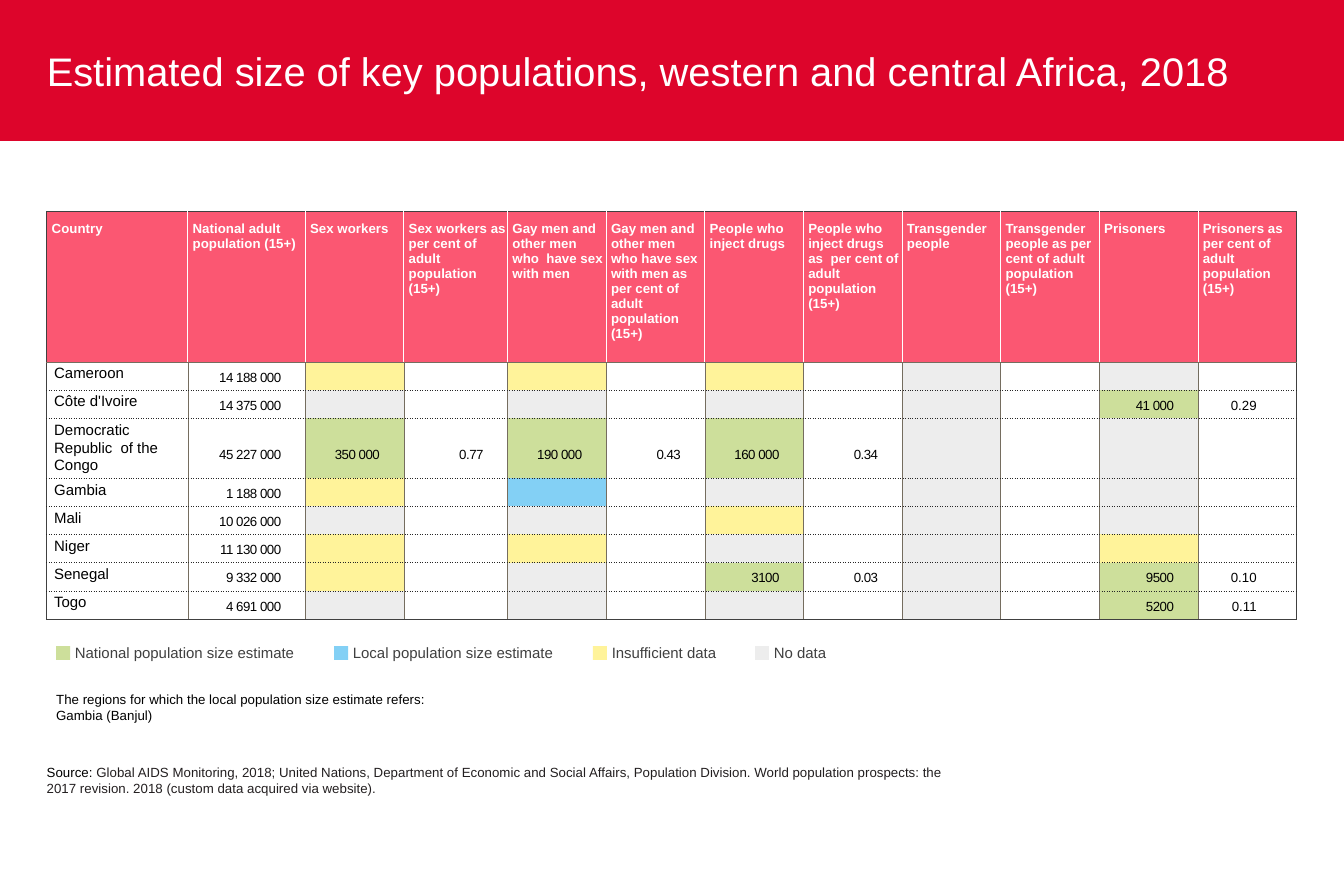
from dataclasses import dataclass

from lxml import etree
from pptx import Presentation, util as u
from pptx.dml.color import RGBColor
from pptx.enum import shapes, text
from pptx.oxml import ns


@dataclass(frozen=True)
class Theme:
    font: str = "Arial"
    band: str = "DD052B"
    header: str = "FB5772"
    white: str = "FFFFFF"
    black: str = "000000"
    source: str = "231F20"
    dark: str = "404040"
    rule: str = "756D5F"
    dots: str = "262626"
    national: str = "CDDF9B"
    local: str = "83D0F5"
    insufficient: str = "FFF39A"
    missing: str = "EDEDED"
    title_size: float = 24
    label_size: float = 9
    small_size: float = 8


@dataclass(frozen=True)
class Estimate:
    color: str
    size: str = ""
    share: str = ""


@dataclass(frozen=True)
class Country:
    name: str
    adults: str
    estimates: tuple[Estimate, ...]
    height: float = 3.14


@dataclass(frozen=True)
class Key:
    label: str
    color: str
    width: float


@dataclass(frozen=True)
class Border:
    color: str
    width: float
    dash: str = "solid"


THEME = Theme()
OUTER = Border(THEME.dark, 0.5)
HEADER_RULE = Border(THEME.white, 0.5)
INNER = Border(THEME.rule, 0.25)
DOTTED = Border(THEME.dots, 0.25, "dot")
LOW = Estimate(THEME.insufficient)
NONE = Estimate(THEME.missing)
LOCAL = Estimate(THEME.local)

SLIDE_WIDTH, SLIDE_HEIGHT = u.Inches(11.25), u.Inches(7.5)
LEFT, INDENTED = 3.48, 4.18
COLUMN_WIDTHS = [10.49, 8.74, 7.34, 7.72] + [7.34] * 8
HEADER_HEIGHT = 16.8
HEADERS = [
    "Country", "National adult population (15+)",
    "Sex workers", "Sex workers as per cent of adult population (15+)",
    "Gay men and other men who  have sex with men",
    "Gay men and other men who have sex with men as per cent of adult population (15+)",
    "People who inject drugs", "People who inject drugs as  per cent of adult population (15+)",
    "Transgender people", "Transgender people as per cent of adult population (15+)",
    "Prisoners", "Prisoners as per cent of adult population (15+)",
]


def counted(size: str, share: str) -> Estimate:
    return Estimate(THEME.national, size, share)


COUNTRIES = [
    Country("Cameroon", "14 188 000", (LOW, LOW, LOW, NONE, NONE)),
    Country("Côte d'Ivoire", "14 375 000", (NONE, NONE, NONE, NONE, counted("41 000", "0.29"))),
    Country("Democratic Republic  of the Congo", "45 227 000",
            (counted("350 000", "0.77"), counted("190 000", "0.43"),
             counted("160 000", "0.34"), NONE, NONE), 6.7),
    Country("Gambia", "1 188 000", (LOW, LOCAL, NONE, NONE, NONE)),
    Country("Mali", "10 026 000", (NONE, NONE, LOW, NONE, NONE)),
    Country("Niger", "11 130 000", (LOW, LOW, NONE, NONE, LOW)),
    Country("Senegal", "9 332 000", (LOW, NONE, counted("3100", "0.03"), NONE, counted("9500", "0.10"))),
    Country("Togo", "4 691 000", (NONE, NONE, NONE, NONE, counted("5200", "0.11"))),
]
KEYS = [
    Key("National population size estimate", THEME.national, 16.44),
    Key("Local population size estimate", THEME.local, 15.02),
    Key("Insufficient data", THEME.insufficient, 7.82),
    Key("No data", THEME.missing, 3.91),
]


def across(percent: float) -> u.Emu:
    return u.Emu(round(SLIDE_WIDTH * percent / 100))


def down(percent: float) -> u.Emu:
    return u.Emu(round(SLIDE_HEIGHT * percent / 100))


def paint(target, color: str) -> None:
    target.fill.solid()
    target.fill.fore_color.rgb = RGBColor.from_string(color)


def write(paragraph, words: str, *, size: float, color: str, bold: bool = False,
          align=text.PP_ALIGN.LEFT, spacing: float = 0) -> None:
    paragraph.alignment = align
    paragraph.font.size = u.Pt(size)
    run = paragraph.add_run()
    run.text = words
    run.font.name, run.font.size, run.font.bold = THEME.font, u.Pt(size), bold
    run.font.color.rgb = RGBColor.from_string(color)
    if spacing:
        run.font._element.set("spc", str(round(spacing * 100)))


def set_margins(target, left: float, top: float, right: float, bottom: float) -> None:
    target.margin_left, target.margin_top = u.Pt(left), u.Pt(top)
    target.margin_right, target.margin_bottom = u.Pt(right), u.Pt(bottom)


def add_text(slide, left: float, top: float, width: float, height: float, wrap: bool = True):
    frame = slide.shapes.add_textbox(across(left), down(top), across(width), down(height)).text_frame
    frame.word_wrap = wrap
    set_margins(frame, 0, 0, 0, 0)
    return frame


def add_borders(cell, sides: dict[str, Border]) -> None:
    properties = cell._tc.get_or_add_tcPr()
    for position, (side, border) in enumerate(sides.items()):
        line = etree.Element(ns.qn(f"a:ln{side}"), w=str(u.Pt(border.width)))
        fill = etree.SubElement(line, ns.qn("a:solidFill"))
        etree.SubElement(fill, ns.qn("a:srgbClr"), val=border.color)
        etree.SubElement(line, ns.qn("a:prstDash"), val=border.dash)
        properties.insert(position, line)


def fill_cell(cell, words: str, row: int, column: int, tall: bool) -> None:
    paragraph = cell.text_frame.paragraphs[0]
    if row == 0:
        set_margins(cell, 3, 6, 0, 0)
        write(paragraph, words, size=THEME.small_size, color=THEME.white, bold=True)
    elif column == 0:
        set_margins(cell, 4.5, 2, 0, 0)
        paragraph.space_before = u.Pt(2.3)
        paragraph.line_spacing = 1.04 if tall else 1.0
        write(paragraph, words, size=THEME.label_size, color=THEME.black)
    else:
        last = column == len(HEADERS) - 1
        set_margins(cell, 0, 7.5 if tall else 2, 24 if last else 14.4, 0)
        cell.vertical_anchor = text.MSO_ANCHOR.MIDDLE
        paragraph.space_before = u.Pt(2.5)
        paragraph.font.size = u.Pt(THEME.small_size)
        if words:
            write(paragraph, words, size=THEME.small_size, color=THEME.black,
                  align=text.PP_ALIGN.RIGHT, spacing=0 if last else -0.3)


def add_population_table(slide) -> None:
    heights = [HEADER_HEIGHT] + [country.height for country in COUNTRIES]
    table = slide.shapes.add_table(len(heights), len(HEADERS), across(LEFT), down(23.6),
                                   across(sum(COLUMN_WIDTHS)), down(sum(heights))).table
    table.first_row = table.horz_banding = False
    for column, width in zip(table.columns, COLUMN_WIDTHS):
        column.width = across(width)
    for row, height in zip(table.rows, heights):
        row.height = down(height)
    rows = [[(words, THEME.header) for words in HEADERS]]
    for country in COUNTRIES:
        cells = [(country.name, None), (country.adults, None)]
        for estimate in country.estimates:
            cells += [(estimate.size, estimate.color), (estimate.share, None)]
        rows.append(cells)
    edges = [OUTER, INNER] + [DOTTED] * (len(rows) - 2) + [OUTER]
    for row, cells in enumerate(rows):
        inner = INNER if row else HEADER_RULE
        for column, (words, color) in enumerate(cells):
            cell = table.cell(row, column)
            fill_cell(cell, words, row, column, tall=heights[row] == max(heights[1:]))
            if color:
                paint(cell, color)
            else:
                cell.fill.background()
            add_borders(cell, {"L": inner if column else OUTER,
                               "R": inner if column < len(cells) - 1 else OUTER,
                               "T": edges[row], "B": edges[row + 1]})


def add_legend(slide) -> None:
    left, label_offset, gap, side = INDENTED, 1.4, 2.84, across(1.04)
    for key in KEYS:
        swatch = slide.shapes.add_shape(shapes.MSO_SHAPE.RECTANGLE, across(left), down(72.1), side, side)
        swatch.shadow.inherit = False
        swatch.line.fill.background()
        paint(swatch, key.color)
        frame = add_text(slide, left + label_offset, 71.87, key.width, 2, wrap=False)
        write(frame.paragraphs[0], key.label, size=THEME.label_size, color=THEME.dark)
        left += label_offset + key.width + gap


def add_title(slide, words: str) -> None:
    title = slide.shapes.title
    title.left, title.top, title.width, title.height = 0, 0, SLIDE_WIDTH, down(15.73)
    paint(title, THEME.band)
    frame = title.text_frame
    frame.auto_size, frame.word_wrap = text.MSO_AUTO_SIZE.NONE, True
    frame.vertical_anchor = text.MSO_ANCHOR.MIDDLE
    set_margins(frame, 28.2, 3.6, 7.2, 3.6)
    write(frame.paragraphs[0], words, size=THEME.title_size, color=THEME.white)


def add_notes_below(slide) -> None:
    regions = add_text(slide, INDENTED, 77.2, 34.6, 5.3)
    write(regions.paragraphs[0], "The regions for which the local population size estimate refers:",
          size=THEME.small_size, color=THEME.black)
    write(regions.add_paragraph(), "Gambia (Banjul)", size=THEME.small_size, color=THEME.black)
    source = add_text(slide, LEFT, 85.33, 67.47, 3.6).paragraphs[0]
    write(source, "Source: ", size=THEME.small_size, color=THEME.black)
    write(source, "Global AIDS Monitoring, 2018; United Nations, Department of Economic and Social Affairs, "
          "Population Division. World population prospects: the 2017 revision. 2018 "
          "(custom data acquired via website).", size=THEME.small_size, color=THEME.source)


def main() -> None:
    presentation = Presentation()
    presentation.slide_width, presentation.slide_height = SLIDE_WIDTH, SLIDE_HEIGHT
    slide = presentation.slides.add_slide(presentation.slide_layouts[5])
    add_title(slide, "Estimated size of key populations, western and central Africa, 2018")
    add_population_table(slide)
    add_legend(slide)
    add_notes_below(slide)
    presentation.save("out.pptx")


if __name__ == "__main__":
    main()
